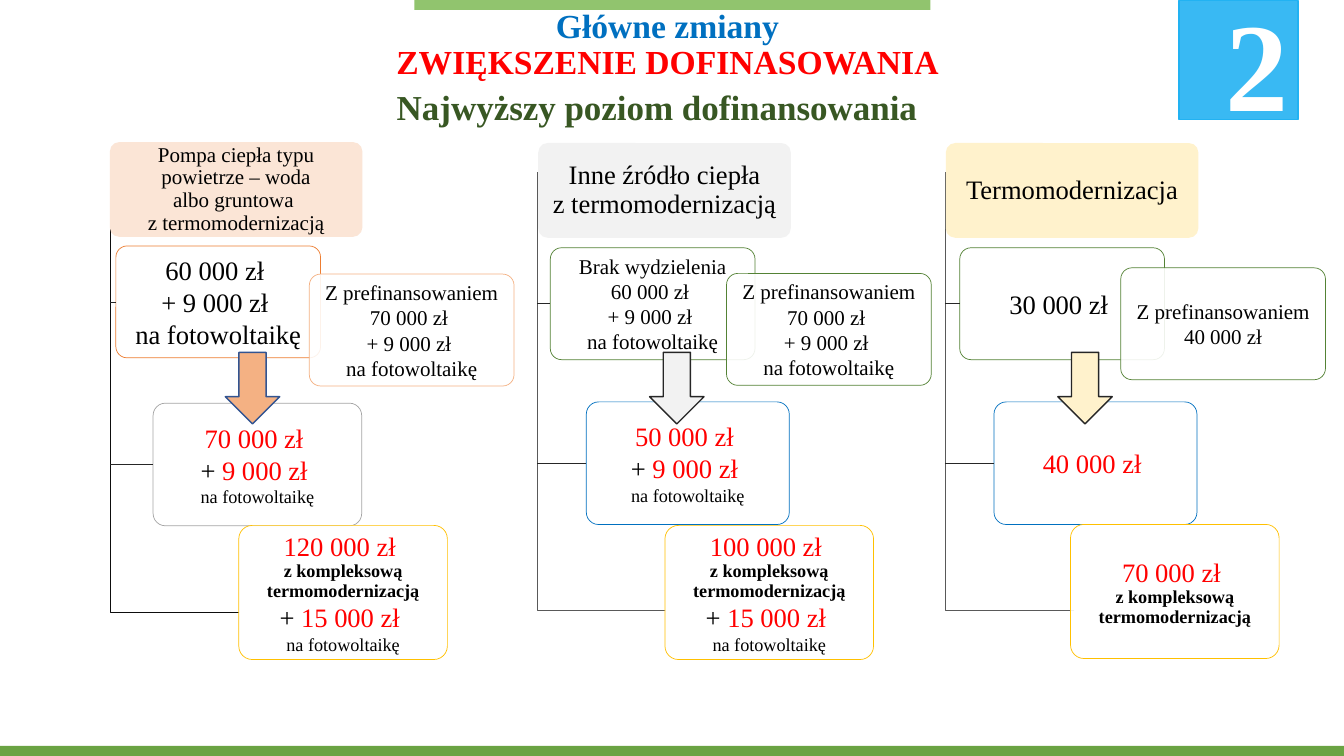
from dataclasses import dataclass

from lxml import etree
from pptx import Presentation
from pptx.dml.color import RGBColor
from pptx.enum.shapes import MSO_CONNECTOR, MSO_SHAPE
from pptx.enum.text import MSO_ANCHOR, PP_ALIGN
from pptx.oxml.ns import qn
from pptx.util import Pt

RECTANGLE = MSO_SHAPE.RECTANGLE
ROUNDED = MSO_SHAPE.ROUNDED_RECTANGLE
RIGHT_ARROW = MSO_SHAPE.RIGHT_ARROW
STRAIGHT = MSO_CONNECTOR.STRAIGHT
MIDDLE = MSO_ANCHOR.MIDDLE
TOP = MSO_ANCHOR.TOP
CENTER = PP_ALIGN.CENTER
LEFT = PP_ALIGN.LEFT

FONT = "Times New Roman"
WHITE = RGBColor(0xFF, 0xFF, 0xFF)
BLACK = RGBColor(0, 0, 0)
RED = RGBColor(0xFF, 0, 0)
BLUE = RGBColor(0, 0x70, 0xC0)
DARK_GREEN = RGBColor(0x38, 0x57, 0x23)
GREEN = RGBColor(0x54, 0x82, 0x35)
BAR_GREEN = RGBColor(0x6A, 0xA3, 0x43)
LIGHT_GREEN = RGBColor(0x91, 0xC4, 0x6E)
ORANGE = RGBColor(0xED, 0x7D, 0x31)
LIGHT_ORANGE = RGBColor(0xF4, 0xB1, 0x83)
PEACH = RGBColor(0xFB, 0xE5, 0xD6)
CREAM = RGBColor(0xFF, 0xF2, 0xCC)
GOLD = RGBColor(0xFF, 0xC0, 0)
PALE_GRAY = RGBColor(0xF2, 0xF2, 0xF2)
GRAY = RGBColor(0xA5, 0xA5, 0xA5)
MID_GRAY = RGBColor(0x59, 0x59, 0x59)
DARK_GRAY = RGBColor(0x26, 0x26, 0x26)
NEAR_BLACK = RGBColor(0x0D, 0x0D, 0x0D)
NAVY = RGBColor(0x32, 0x54, 0x91)
SKY = RGBColor(0x39, 0xB9, 0xF3)
SKY_EDGE = RGBColor(0x22, 0xB2, 0xF2)

CARD_SIZE = (146.2, 79.9)
DEEP_SIZE = (149, 95.8)
HEADER_SIZE = (180.4, 67.7)


@dataclass
class Column:
    header: tuple
    header_fill: RGBColor
    header_text: list
    start: tuple
    start_line: RGBColor
    start_text: list
    prefinanced: tuple
    prefinanced_line: RGBColor
    prefinanced_text: list
    raised: tuple
    raised_line: RGBColor
    raised_text: list
    deep: tuple
    deep_text: list
    bracket: tuple
    bracket_line: tuple
    arrow_left: float
    arrow_fill: RGBColor
    arrow_line: RGBColor


def line(text, size, color=BLACK, bold=False, spacing=None):
    return [(text, size, color, bold)], spacing


def photovoltaics(amount):
    return [("+ ", 19, BLACK, False), (f"{amount} zł \n", 19, RED, False),
            ("na fotowoltaikę", 13, BLACK, False)], None


def deep_renovation(amount, extra=None):
    lines = [line(f"{amount} zł ", 19, RED),
             line("z kompleksową", 13, bold=True, spacing=0.9),
             line("termomodernizacją", 13, bold=True, spacing=0.9)]
    return lines + ([photovoltaics(extra)] if extra else [])


def plain_amount(amount, size):
    return [line(f"{amount} zł ", size), line("+ 9 000 zł \nna fotowoltaikę", size)]


def write_text(shape, paragraphs, align=CENTER, anchor=MIDDLE, insets=(7.2, 3.6)):
    frame = shape.text_frame
    frame.word_wrap = True
    frame.vertical_anchor = anchor
    frame.margin_left = frame.margin_right = Pt(insets[0])
    frame.margin_top = frame.margin_bottom = Pt(insets[1])
    for index, (runs, spacing) in enumerate(paragraphs):
        paragraph = frame.add_paragraph() if index else frame.paragraphs[0]
        paragraph.alignment = align
        if spacing:
            paragraph.line_spacing = spacing
        for text, size, color, bold in runs:
            for part_index, part in enumerate(text.split("\n")):
                if part_index:
                    paragraph.add_line_break()
                if part:
                    run = paragraph.add_run()
                    run.text = part
                    run.font.name = FONT
                    run.font.size = Pt(size)
                    run.font.bold = bold
                    run.font.color.rgb = color


def add_block(slide, kind, position, size, fill, outline=None, width=1):
    shape = slide.shapes.add_shape(kind, *map(Pt, position + size))
    shape.shadow.inherit = False
    shape.fill.solid()
    shape.fill.fore_color.rgb = fill
    if outline is None:
        shape.line.fill.background()
    else:
        shape.line.color.rgb = outline
        shape.line.width = Pt(width)
    return shape


def add_header(slide, position, fill, paragraphs):
    header = add_block(slide, ROUNDED, position, HEADER_SIZE, fill)
    header.adjustments[0] = 0.1
    write_text(header, paragraphs, insets=(3.8, 3))


def add_card(slide, position, size, outline, paragraphs):
    card = add_block(slide, ROUNDED, position, size, WHITE, outline, 0.5)
    card.adjustments[0] = 0.1
    color = card.fill._xPr.find(qn("a:solidFill"))[0]
    etree.SubElement(color, qn("a:alpha")).set("val", "90000")
    write_text(card, paragraphs, insets=(4.2, 2.8))
    return card


def add_text(slide, position, size, paragraphs, align=LEFT):
    box = slide.shapes.add_textbox(*map(Pt, position + size))
    write_text(box, paragraphs, align, TOP)


def add_bracket(slide, left, top, right, bottom, color, width):
    builder = slide.shapes.build_freeform(Pt(left), Pt(top))
    builder.add_line_segments([(Pt(left), Pt(bottom)), (Pt(right), Pt(bottom))], close=False)
    bracket = builder.convert_to_shape()
    bracket.shadow.inherit = False
    bracket.fill.background()
    bracket.line.color.rgb = color
    bracket.line.width = Pt(width)


def add_branch(slide, left, card):
    middle = card.top + card.height // 2
    branch = slide.shapes.add_connector(STRAIGHT, Pt(left), middle, card.left, middle)
    branch.end_connect(card, 1)
    branch.line.color.rgb = DARK_GRAY
    branch.line.width = Pt(0.5)
    etree.SubElement(branch._element.spPr, qn("a:effectLst"))


def add_column(slide, column):
    add_bracket(slide, *column.bracket, *column.bracket_line)
    add_header(slide, column.header, column.header_fill, column.header_text)
    start = add_card(slide, column.start, CARD_SIZE, column.start_line, column.start_text)
    raised = add_card(slide, column.raised[:2], column.raised[2:], column.raised_line, column.raised_text)
    add_card(slide, column.deep, DEEP_SIZE, GOLD, column.deep_text)
    arrow = add_block(slide, RIGHT_ARROW, (column.arrow_left, 257.8), (51.1, 38.9),
                      column.arrow_fill, column.arrow_line)
    arrow.rotation = 90
    for card in (start, raised):
        add_branch(slide, column.bracket[0], card)
    add_card(slide, column.prefinanced, CARD_SIZE, column.prefinanced_line, column.prefinanced_text)


def main():
    presentation = Presentation()
    presentation.slide_width, presentation.slide_height = Pt(960), Pt(540)
    slide = presentation.slides.add_slide(presentation.slide_layouts[6])
    add_block(slide, RECTANGLE, (0, 532.8), (960, 7.2), BAR_GREEN)
    add_block(slide, RECTANGLE, (296, 0), (368.6, 7), LIGHT_GREEN)
    add_text(slide, (149.8, 2.9), (654, 56.9),
             [line("Główne zmiany", 24, BLUE, True, 0.9),
              line("ZWIĘKSZENIE DOFINASOWANIA", 24, RED, True, 0.9)], CENTER)
    add_text(slide, (276.3, 57.6), (480, 37.4),
             [line("Najwyższy poziom dofinansowania", 25, DARK_GREEN, True)])
    prefinancing = line("Z prefinansowaniem", 15)
    prefinanced_text = [prefinancing] + plain_amount("70 000", 15)
    columns = [
        Column((78.5, 101.5), PEACH,
               [line("Pompa ciepła typu powietrze – woda\nalbo gruntowa \nz termomodernizacją", 15, spacing=0.9)],
               (82.8, 175.7), ORANGE, plain_amount("60 000", 19),
               (221, 195.8), LIGHT_ORANGE, prefinanced_text,
               (109.4, 288, 149, 87.6), GRAY, [line("70 000 zł ", 19, RED), photovoltaics("9 000")],
               (170.6, 375.3), deep_renovation("120 000", "15 000"),
               (78.7, 124.6, 170.6, 437), (NEAR_BLACK, 0.25), 154.8, LIGHT_ORANGE, NAVY),
        Column((384.5, 102.2), PALE_GRAY, [line("Inne źródło ciepła\nz termomodernizacją", 19, spacing=0.9)],
               (393.1, 177), GREEN, [line("Brak wydzielenia", 15)] + plain_amount("60 000", 15),
               (519, 195.3), GREEN, prefinanced_text,
               (418.8, 287.1, 145, 87.6), BLUE, [line("50 000 zł ", 19, RED), photovoltaics("9 000")],
               (475, 375.3), deep_renovation("100 000", "15 000"),
               (383.8, 123.1, 475.8, 436), (MID_GRAY, 0.5), 457.9, PALE_GRAY, DARK_GRAY),
        Column((675.6, 102.2), CREAM, [line("Termomodernizacja", 19, spacing=0.9)],
               (685.6, 177), GREEN, [line("30 000 zł ", 19)],
               (800.6, 191.3), GREEN, [prefinancing, line("40 000 zł", 15)],
               (710, 287.1, 145, 87.6), BLUE, [line("40 000 zł ", 19, RED)],
               (764.7, 374.6), deep_renovation("70 000"),
               (675, 123.1, 767, 436), (MID_GRAY, 0.5), 749.5, CREAM, DARK_GRAY),
    ]
    for column in columns:
        add_column(slide, column)
    add_block(slide, RECTANGLE, (842.2, 0.5), (84.9, 84.9), SKY, SKY_EDGE)
    add_text(slide, (868.3, -13.7), (85, 116.6), [line("2", 90, WHITE, True)])
    presentation.save("out.pptx")


if __name__ == "__main__":
    main()
